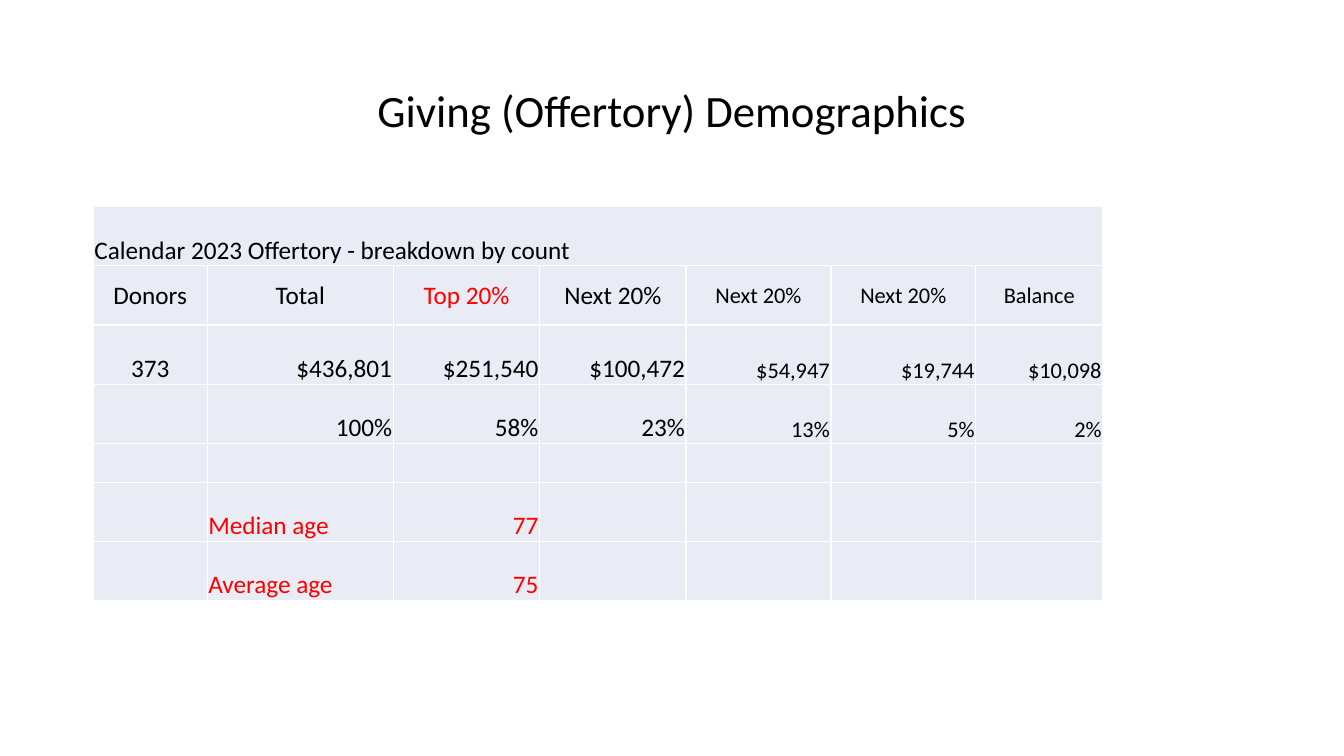
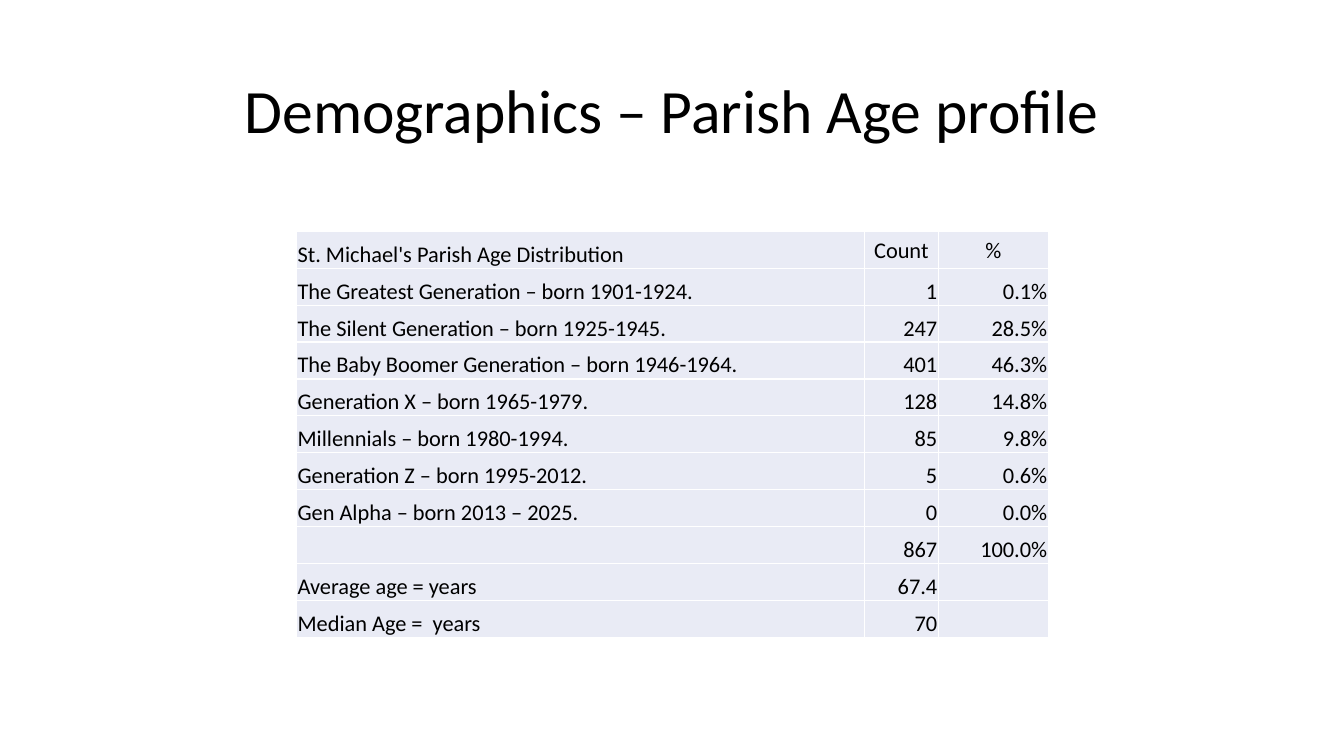
from dataclasses import dataclass

from lxml.etree import SubElement
from pptx import Presentation
from pptx.dml.color import RGBColor
from pptx.enum.text import MSO_ANCHOR, PP_ALIGN
from pptx.oxml.ns import qn
from pptx.slide import Slide
from pptx.table import _Cell
from pptx.util import Cm, Pt

FONT = "Calibri"
BLACK = "000000"
RED = "FF0000"
WHITE = "FFFFFF"
CELL_FILL = "E9EBF5"
CELL_INSET = Cm(0.03)
BORDER_WIDTH = Pt(1)
LEFT, CENTER, RIGHT = PP_ALIGN.LEFT, PP_ALIGN.CENTER, PP_ALIGN.RIGHT


@dataclass(frozen=True)
class Column:
    width: float
    size: int
    align: PP_ALIGN = RIGHT


@dataclass(frozen=True)
class Entry:
    """Cell content; align, when given, replaces the column's alignment."""
    text: str = ""
    color: str = BLACK
    align: PP_ALIGN | None = None


@dataclass(frozen=True)
class TableLayout:
    """Position and sizes in centimetres."""
    left: float
    top: float
    columns: list[Column]
    row_heights: list[float]
    heading_row: int = 0


GIVING_LAYOUT = TableLayout(
    left=2.35, top=5.21, heading_row=1,
    columns=[Column(2.87, 18, CENTER), Column(4.69, 18), Column(3.69, 18), Column(3.69, 18),
             Column(3.65, 16), Column(3.65, 16), Column(3.2, 16)],
    row_heights=[1.49] * 4 + [0.98] + [1.49] * 2,
)
GIVING_ROWS = [
    [Entry("Calendar 2023 Offertory - breakdown by count", align=LEFT)],
    ["Donors", "Total", Entry("Top 20%", RED), "Next 20%", "Next 20%", "Next 20%", "Balance"],
    ["373", "$436,801", "$251,540", "$100,472", "$54,947", "$19,744", "$10,098"],
    ["", "100%", "58%", "23%", "13%", "5%", "2%"],
    [],
    ["", Entry("Median age", RED, LEFT), Entry("77", RED)],
    ["", Entry("Average age", RED, LEFT), Entry("75", RED)],
]

AGE_LAYOUT = TableLayout(
    left=7.47, top=5.83,
    columns=[Column(14.31, 16, LEFT), Column(1.87, 16), Column(2.77, 16)],
    row_heights=[0.93] * 11,
)
AGE_ROWS = [
    ["St. Michael's Parish Age Distribution", "Count", "%"],
    ["The Greatest Generation – born 1901-1924.", "1", "0.1%"],
    ["The Silent Generation – born 1925-1945.", "247", "28.5%"],
    ["The Baby Boomer Generation – born 1946-1964.", "401", "46.3%"],
    ["Generation X – born 1965-1979.", "128", "14.8%"],
    ["Millennials – born 1980-1994.", "85", "9.8%"],
    ["Generation Z – born 1995-2012.", "5", "0.6%"],
    ["Gen Alpha – born 2013 – 2025.", "0", "0.0%"],
    ["", "867", "100.0%"],
    ["Average age = years", "67.4"],
    ["Median Age =  years", "70"],
]


def rgb(color: str) -> RGBColor:
    return RGBColor.from_string(color)


def write_text(text_frame, text: str, *, size: int, color: str = BLACK,
               align: PP_ALIGN = LEFT, line_spacing: float = 1.0) -> None:
    paragraph = text_frame.paragraphs[0]
    paragraph.text = text
    paragraph.alignment = align
    paragraph.line_spacing = line_spacing
    font = paragraph.font
    font.name, font.size = FONT, Pt(size)
    font.color.rgb = rgb(color)


def add_title(slide: Slide, text: str, size: int) -> None:
    text_frame = slide.shapes.add_textbox(Cm(2.33), Cm(1.01), Cm(29.21), Cm(3.68)).text_frame
    text_frame.word_wrap = True
    text_frame.vertical_anchor = MSO_ANCHOR.MIDDLE
    write_text(text_frame, text, size=size, align=CENTER, line_spacing=0.9)


def style_cell(cell: _Cell) -> None:
    """Set insets, white borders and fill; borders must precede the fill in the XML."""
    cell.margin_left = cell.margin_top = cell.margin_right = CELL_INSET
    cell.margin_bottom = 0
    properties = cell._tc.get_or_add_tcPr()
    for side in ("a:lnL", "a:lnR", "a:lnT", "a:lnB"):
        line = SubElement(properties, qn(side), w=str(BORDER_WIDTH))
        SubElement(SubElement(line, qn("a:solidFill")), qn("a:srgbClr"), val=WHITE)
    cell.fill.solid()
    cell.fill.fore_color.rgb = rgb(CELL_FILL)


def add_data_table(slide: Slide, layout: TableLayout, rows: list[list[str | Entry]]):
    columns, heights = layout.columns, layout.row_heights
    table = slide.shapes.add_table(
        len(heights), len(columns), Cm(layout.left), Cm(layout.top),
        Cm(sum(column.width for column in columns)), Cm(sum(heights))).table
    table.first_row = table.horz_banding = False
    for table_column, column in zip(table.columns, columns):
        table_column.width = Cm(column.width)
    for row_index, (height, row) in enumerate(zip(heights, rows)):
        table.rows[row_index].height = Cm(height)
        entries = row + [""] * (len(columns) - len(row))
        for column_index, (column, entry) in enumerate(zip(columns, entries)):
            if isinstance(entry, str):
                entry = Entry(entry)
            cell = table.cell(row_index, column_index)
            style_cell(cell)
            is_heading = row_index == layout.heading_row and column.align != LEFT
            cell.vertical_anchor = MSO_ANCHOR.MIDDLE if is_heading else MSO_ANCHOR.BOTTOM
            align = entry.align or (CENTER if is_heading else column.align)
            write_text(cell.text_frame, entry.text, size=column.size,
                       color=entry.color, align=align)
    return table


def main() -> None:
    presentation = Presentation()
    presentation.slide_width, presentation.slide_height = Cm(33.87), Cm(19.05)
    blank_layout = presentation.slide_layouts[6]

    giving_slide = presentation.slides.add_slide(blank_layout)
    add_title(giving_slide, "Giving (Offertory) Demographics", 32)
    giving_table = add_data_table(giving_slide, GIVING_LAYOUT, GIVING_ROWS)
    giving_table.cell(0, 0).merge(giving_table.cell(0, len(GIVING_LAYOUT.columns) - 1))

    age_slide = presentation.slides.add_slide(blank_layout)
    add_title(age_slide, "Demographics – Parish Age profile", 44)
    add_data_table(age_slide, AGE_LAYOUT, AGE_ROWS)

    presentation.save("out.pptx")


if __name__ == "__main__":
    main()
